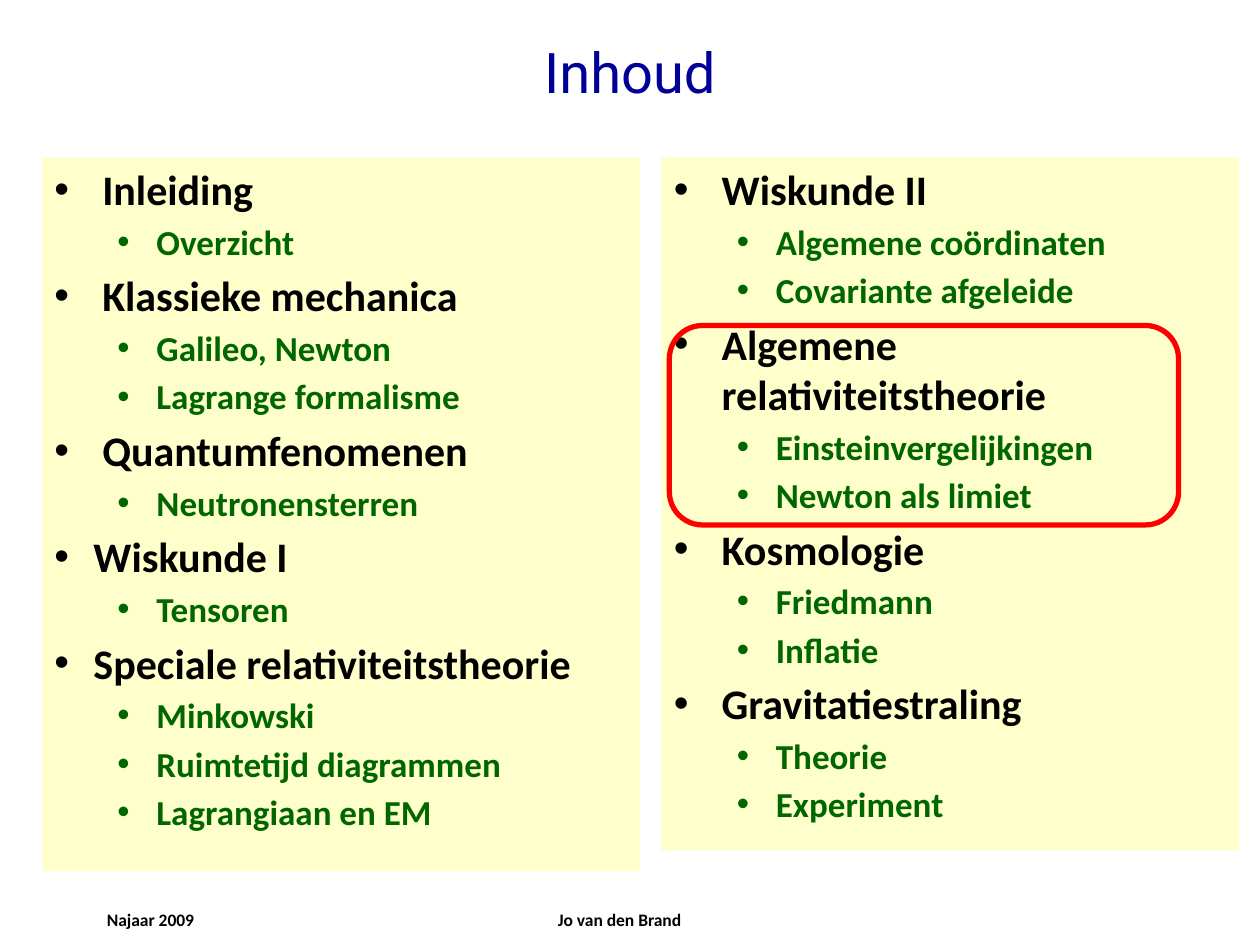
from dataclasses import dataclass

from lxml.etree import SubElement
from pptx import Presentation
from pptx.dml.color import RGBColor
from pptx.enum.shapes import MSO_SHAPE
from pptx.enum.text import MSO_ANCHOR, PP_ALIGN
from pptx.oxml.ns import qn
from pptx.util import Inches, Pt


@dataclass(frozen=True)
class Theme:
    body_font: str = "Calibri"
    title_font: str = "Roboto"
    title_color: str = "000099"
    topic_color: str = "000000"
    detail_color: str = "006600"
    panel_color: str = "FFFFCC"
    highlight_color: str = "FF0000"
    title_size: int = 32
    topic_size: int = 24
    detail_size: int = 20
    footer_size: int = 10
    space_share: float = 0.18


WIDE, NARROW = 0.38, 0.31  # bullet indents in inches

LEFT_TOPICS = [
    ("Inleiding", WIDE, ["Overzicht"]),
    ("Klassieke mechanica", WIDE, ["Galileo, Newton", "Lagrange formalisme"]),
    ("Quantumfenomenen", WIDE, ["Neutronensterren"]),
    ("Wiskunde I", NARROW, ["Tensoren"]),
    ("Speciale relativiteitstheorie", NARROW,
     ["Minkowski", "Ruimtetijd diagrammen", "Lagrangiaan en EM"]),
]
RIGHT_TOPICS = [
    ("Wiskunde II", WIDE, ["Algemene coördinaten", "Covariante afgeleide"]),
    ("Algemene relativiteitstheorie", WIDE,
     ["Einsteinvergelijkingen", "Newton als limiet"]),
    ("Kosmologie", WIDE, ["Friedmann", "Inflatie"]),
    ("Gravitatiestraling", WIDE, ["Theorie", "Experiment"]),
]


class SlideBuilder:
    """Places elements on a grid of 120 columns by 90 rows."""

    def __init__(self, deck, theme):
        self.theme = theme
        self.slide = deck.slides.add_slide(deck.slide_layouts[6])
        self.column = deck.slide_width / 120
        self.row = deck.slide_height / 90

    def area(self, left, top, width, height):
        return (round(left * self.column), round(top * self.row),
                round(width * self.column), round(height * self.row))

    def add_span(self, para, text, color, **font_format):
        span = para.add_run()
        span.text = text
        font_format = {"name": self.theme.body_font, "bold": True} | font_format
        for name, value in font_format.items():
            setattr(span.font, name, value)
        span.font.color.rgb = RGBColor.from_string(color)

    def label(self, grid, text, color, align, wrap=True, **font_format):
        box = self.slide.shapes.add_textbox(*self.area(*grid))
        box.text_frame.word_wrap = wrap
        para = box.text_frame.paragraphs[0]
        para.alignment = align
        self.add_span(para, text, color, **font_format)

    def shape(self, kind, grid):
        shape = self.slide.shapes.add_shape(kind, *self.area(*grid))
        shape.shadow.inherit = False
        return shape

    def bullet(self, para, text, level, margin, hanging, size, color):
        para.level = level
        para.alignment = PP_ALIGN.LEFT
        properties = para._p.get_or_add_pPr()
        properties.set("marL", str(Inches(margin)))
        properties.set("indent", str(-Inches(hanging)))
        SubElement(properties, qn("a:buFont"), typeface="Arial")
        SubElement(properties, qn("a:buChar"), char="•")
        self.add_span(para, text, color, size=Pt(size))

    def topic_panel(self, grid, topics):
        theme = self.theme
        panel = self.shape(MSO_SHAPE.RECTANGLE, grid)
        panel.fill.solid()
        panel.fill.fore_color.rgb = RGBColor.from_string(theme.panel_color)
        panel.line.fill.background()
        frame = panel.text_frame
        frame.word_wrap = True
        frame.vertical_anchor = MSO_ANCHOR.TOP
        lines = []
        for topic, indent, details in topics:
            lines.append((topic, 0, indent, indent, theme.topic_size, theme.topic_color))
            lines += [(detail, 1, 0.81, NARROW, theme.detail_size, theme.detail_color)
                      for detail in details]
        for index, line in enumerate(lines):
            para = frame.add_paragraph() if index else frame.paragraphs[0]
            if index:
                para.space_before = Pt(line[4] * theme.space_share)
            self.bullet(para, *line)

    def highlight(self, grid):
        frame = self.shape(MSO_SHAPE.ROUNDED_RECTANGLE, grid)
        frame.fill.background()
        frame.line.color.rgb = RGBColor.from_string(self.theme.highlight_color)
        frame.line.width = Pt(3)


def main():
    deck = Presentation()
    deck.slide_width, deck.slide_height = Inches(10), Inches(7.5)
    theme = Theme()
    page = SlideBuilder(deck, theme)
    footers = [((9, 86, 25, 4), "Najaar 2009", PP_ALIGN.LEFT),
               ((40, 86, 38, 4), "Jo van den Brand", PP_ALIGN.CENTER)]
    for grid, text, align in footers:
        page.label(grid, text, theme.topic_color, align, size=Pt(theme.footer_size))
    page.label((48.5, 3, 23, 7.7), "Inhoud", theme.title_color, PP_ALIGN.CENTER,
               wrap=False, name=theme.title_font, size=Pt(theme.title_size), bold=False)
    page.topic_panel((4, 15, 57, 68), LEFT_TOPICS)
    page.topic_panel((63, 15, 55, 66), RIGHT_TOPICS)
    page.highlight((63.75, 31, 48.5, 19))
    deck.save("out.pptx")


if __name__ == "__main__":
    main()
